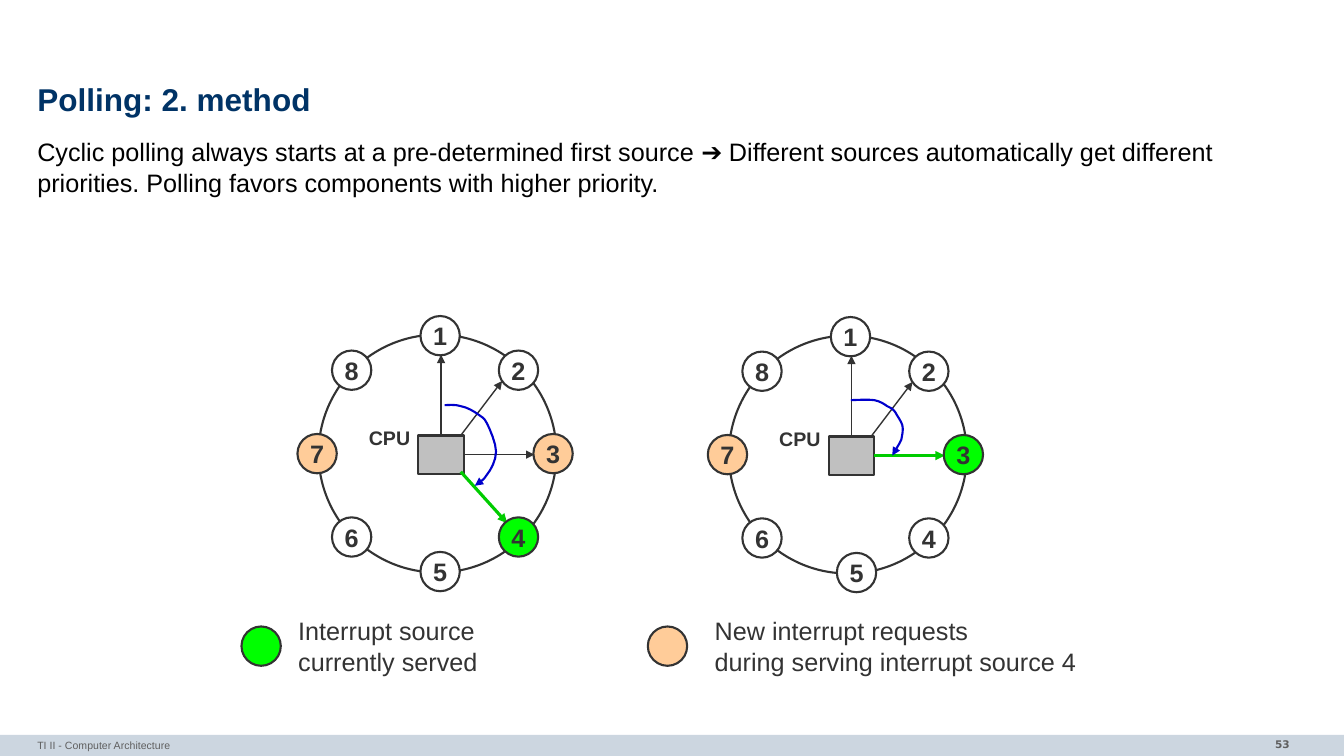
from math import cos, radians, sin

from lxml import etree
from pptx import Presentation
from pptx.dml.color import RGBColor
from pptx.enum.shapes import MSO_CONNECTOR, MSO_SHAPE
from pptx.enum.text import MSO_ANCHOR, PP_ALIGN
from pptx.oxml.ns import qn
from pptx.util import Inches, Pt

OVAL, RECTANGLE = MSO_SHAPE.OVAL, MSO_SHAPE.RECTANGLE
STRAIGHT = MSO_CONNECTOR.STRAIGHT
LEFT, CENTER, RIGHT = PP_ALIGN.LEFT, PP_ALIGN.CENTER, PP_ALIGN.RIGHT
MIDDLE, TOP = MSO_ANCHOR.MIDDLE, MSO_ANCHOR.TOP
CPU_TOP, CPU_RIGHT = 0, 3

WHITE = RGBColor(0xFF, 0xFF, 0xFF)
BLACK = RGBColor(0x00, 0x00, 0x00)
NAVY = RGBColor(0x00, 0x33, 0x66)
INK = RGBColor(0x33, 0x33, 0x33)
FOOTER_INK = RGBColor(0x5F, 0x5F, 0x5F)
FOOTER_FILL = RGBColor(0xCC, 0xD6, 0xE0)
CPU_FILL = RGBColor(0xC0, 0xC0, 0xC0)
SERVED = RGBColor(0x00, 0xFF, 0x00)
SERVED_ARROW = RGBColor(0x00, 0xCC, 0x00)
REQUESTED = RGBColor(0xFF, 0xCC, 0x99)
SWEEP_BLUE = RGBColor(0x00, 0x00, 0xCC)

SLIDE_W, SLIDE_H = Inches(13.33), Inches(7.5)
ROWS = 75
CELL = SLIDE_H / ROWS  # square grid cells
COLS = SLIDE_W / CELL
MARGIN, TEXT_COLS = 3.7, 126
SOURCE_SIZE, RING_SIZE, ORBIT = 3.9, 23.6, 11.7

# Bezier control points in cells from the ring's centre
SWEEP_TO_4 = [
    (0.7, -4.8), (0.9, -4.8), (1.8, -4.9), (2.3, -4.7), (2.9, -4.6),
    (3.6, -4.2), (4.0, -3.9), (4.4, -3.6), (4.6, -3.6), (4.9, -3.0),
    (5.2, -2.4), (5.8, -1.0), (5.8, -0.2), (5.8, 0.7), (5.3, 1.6),
    (4.9, 2.1), (4.6, 2.7), (3.9, 3.0), (3.7, 3.2)]
SWEEP_TO_3 = [
    (0.3, -5.4), (0.7, -5.4), (2.0, -5.5), (2.6, -5.4), (3.2, -5.3),
    (3.6, -5.0), (3.9, -4.8), (4.3, -4.6), (4.5, -4.5), (4.7, -4.2),
    (4.9, -3.8), (5.3, -3.3), (5.4, -2.9), (5.5, -2.5), (5.4, -2.0),
    (5.3, -1.5), (5.1, -1.0), (4.6, -0.3), (4.4, 0.1)]


def cells(*counts):
    return [round(count * CELL) for count in counts]


def write(frame, text, size, color, bold=False, font="Arial", align=LEFT,
          anchor=TOP, insets=(0, 0), spacing=None):
    """Fill a frame; insets are (side, top and bottom) in cells."""
    frame.text = text
    frame.word_wrap = True
    frame.vertical_anchor = anchor
    side, edge = cells(*insets)
    frame.margin_left = frame.margin_right = side
    frame.margin_top = frame.margin_bottom = edge
    for paragraph in frame.paragraphs:
        paragraph.alignment = align
        paragraph.line_spacing = spacing
        paragraph.space_before = Pt(0)
        for run in paragraph.runs:
            run.font.name, run.font.size = font, Pt(size)
            run.font.bold, run.font.color.rgb = bold, color


def add_text(slide, box, text, size, color, **style):
    frame = slide.shapes.add_textbox(*cells(*box)).text_frame
    write(frame, text, size, color, **style)


def add_figure(slide, preset, box, fill=None, line=INK):
    figure = slide.shapes.add_shape(preset, *cells(*box))
    figure.shadow.inherit = False
    if fill is None:
        figure.fill.background()
    else:
        figure.fill.solid()
        figure.fill.fore_color.rgb = fill
    if line is None:
        figure.line.fill.background()
    else:
        figure.line.color.rgb = line
        figure.line.width = Pt(1.5)
    return figure


def add_source(slide, x, y, fill, number=""):
    """Draw an interrupt source centred on x, y."""
    half = SOURCE_SIZE / 2
    source = add_figure(slide, OVAL,
                        (x - half, y - half, SOURCE_SIZE, SOURCE_SIZE), fill)
    if number:
        write(source.text_frame, number, 18, INK, bold=True,
              align=CENTER, anchor=MIDDLE)
        source.text_frame.word_wrap = False


def add_arrowhead(stroke):
    line = stroke._element.spPr.find(qn("a:ln"))
    etree.SubElement(line, qn("a:tailEnd"), type="triangle")


def add_arrow(slide, start, end, served=False, cpu=None, side=None):
    arrow = slide.shapes.add_connector(STRAIGHT, *cells(*start, *end))
    if cpu is not None:
        arrow.begin_connect(cpu, side)
    arrow.line.color.rgb = SERVED_ARROW if served else INK
    arrow.line.width = Pt(2.25 if served else 1)
    add_arrowhead(arrow)
    etree.SubElement(arrow._element.spPr, qn("a:effectLst"))


def bezier_points(controls, steps=4):
    points = [controls[0]]
    for first in range(0, len(controls) - 1, 3):
        curve = controls[first:first + 4]
        for step in range(1, steps + 1):
            t = step / steps
            weights = ((1 - t) ** 3, 3 * t * (1 - t) ** 2,
                       3 * t ** 2 * (1 - t), t ** 3)
            points.append(tuple(
                sum(w * point[axis] for w, point in zip(weights, curve))
                for axis in (0, 1)))
    return points


def add_sweep(slide, cx, cy, controls):
    points = [cells(cx + x, cy + y) for x, y in bezier_points(controls)]
    builder = slide.shapes.build_freeform(*points[0])
    builder.add_line_segments(points[1:], close=False)
    sweep = builder.convert_to_shape()
    sweep.shadow.inherit = False
    sweep.fill.background()
    sweep.line.color.rgb = SWEEP_BLUE
    sweep.line.width = Pt(1.5)
    add_arrowhead(sweep)


def add_polling_ring(slide, cx, cy, served, requested, sweep, shifts):
    """Draw the sources around a CPU; shifts moves single sources sideways."""
    half = RING_SIZE / 2
    add_figure(slide, OVAL, (cx - half, cy - half, RING_SIZE, RING_SIZE))
    cpu = add_figure(slide, RECTANGLE, (cx - 1.9, cy - 1.8, 4.5, 3.8), CPU_FILL)
    add_text(slide, (cx - 7.8, cy - 3.2, 6.3, 3.3), "CPU", 14, INK,
             bold=True, insets=(1, 0.5))

    cpu_x, cpu_y = cx + 0.35, cy + 0.1
    add_arrow(slide, (cpu_x, cy - 1.8), (cpu_x, cy - 9.8), cpu=cpu, side=CPU_TOP)
    add_arrow(slide, (cx + 2.3, cy - 1.8), (cx + 6.4, cy - 7.2))
    add_arrow(slide, (cx + 2.6, cpu_y), (cx + 9.6, cpu_y), served == 3,
              cpu, CPU_RIGHT)
    if served == 4:
        add_arrow(slide, (cx + 2.3, cy + 1.8), (cx + 6.9, cy + 6.9), True)

    for number in range(1, 9):
        angle = radians(45 * (number - 1))
        x = cx - 0.25 + ORBIT * sin(angle) + shifts.get(number, 0)
        y = cy - ORBIT * cos(angle)
        fill = (SERVED if number == served
                else REQUESTED if number in requested else WHITE)
        add_source(slide, x, y, fill, str(number))
    add_sweep(slide, cx, cy, sweep)


def add_legend(slide, x, fill, text_x, text):
    add_source(slide, x, 64.1, fill)
    add_text(slide, (text_x, 60.6, 39, 7.1), text, 18, INK, insets=(1, 0.5))


def add_footer(slide):
    add_figure(slide, RECTANGLE, (0, 72.9, COLS, 2.1), FOOTER_FILL, None)
    add_text(slide, (MARGIN, 72.8, 87.2, 2.5), "TI II - Computer Architecture",
             7.5, FOOTER_INK, insets=(0, 0.5))
    add_text(slide, (111, 72.7, 17.9, 2.6), "53", 7.5, FOOTER_INK, bold=True,
             font="DejaVu Sans", align=RIGHT, insets=(1, 0.5))


def main():
    deck = Presentation()
    deck.slide_width, deck.slide_height = SLIDE_W, SLIDE_H
    slide = deck.slides.add_slide(deck.slide_layouts[5])
    add_footer(slide)

    title = slide.shapes.title
    title.left, title.top, title.width, title.height = cells(
        MARGIN, 7.8, TEXT_COLS, 4.7)
    write(title.text_frame, "Polling: 2. method", 22.5, NAVY, bold=True,
          anchor=MIDDLE, spacing=0.85)
    add_text(slide, (MARGIN, 13.5, TEXT_COLS, 7),
             "Cyclic polling always starts at a pre-determined first source ➔ "
             "Different sources automatically get different priorities. "
             "Polling favors components with higher priority.",
             18, BLACK, spacing=1.02)

    add_polling_ring(slide, 43.4, 45, 4, {3, 7}, SWEEP_TO_4, {1: 0.5, 5: 0.5})
    add_polling_ring(slide, 84.1, 45.1, 3, {7}, SWEEP_TO_3, {1: 0.5, 5: 1.1})

    add_legend(slide, 25.9, SERVED, 28.6, "Interrupt source\ncurrently served")
    add_legend(slide, 66.2, REQUESTED, 69.9,
               "New interrupt requests\nduring serving interrupt source 4")
    deck.save("out.pptx")


if __name__ == "__main__":
    main()
